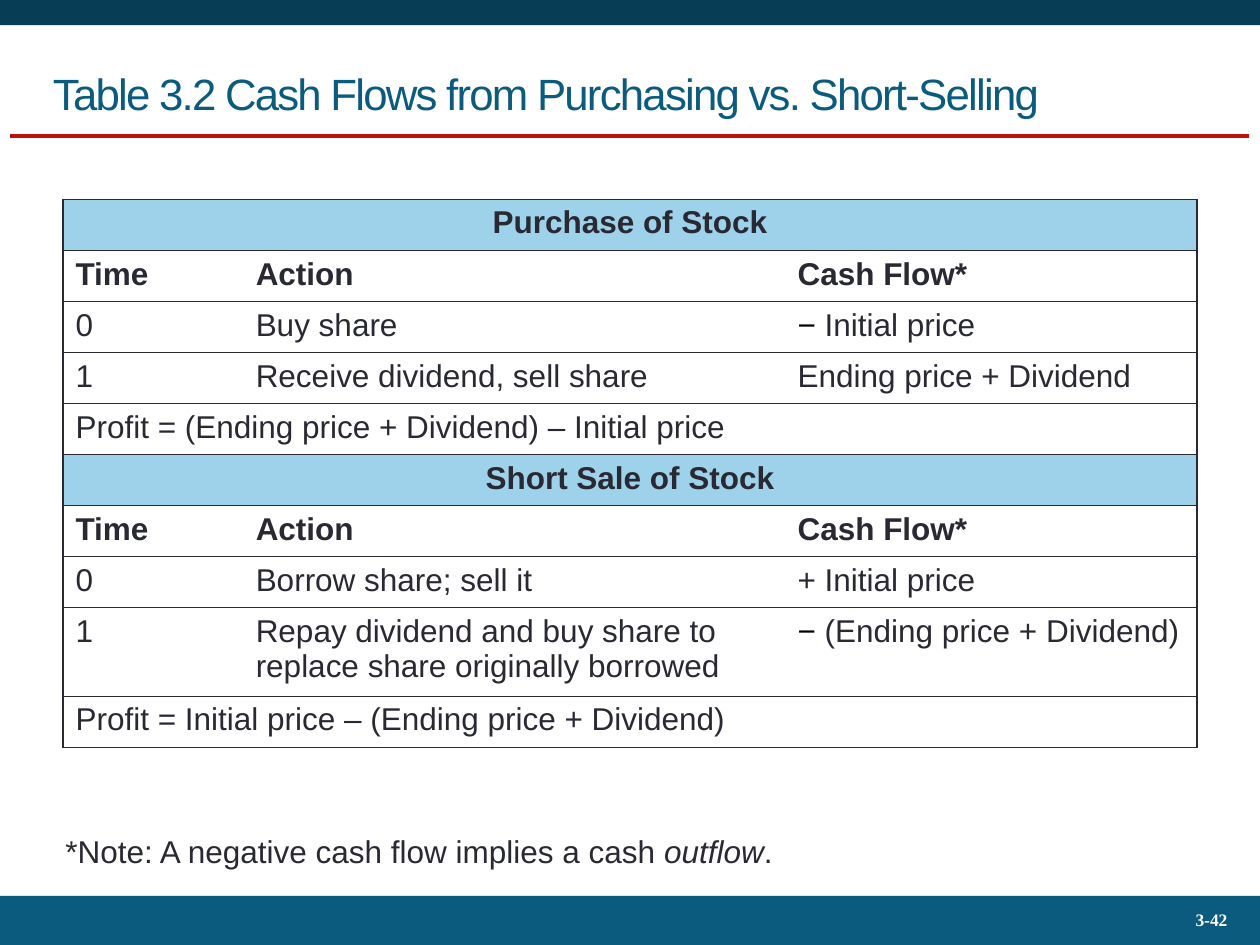
from dataclasses import dataclass

from lxml.etree import SubElement
from pptx import Presentation
from pptx.dml.color import RGBColor
from pptx.enum.shapes import MSO_CONNECTOR, MSO_SHAPE
from pptx.enum.text import MSO_ANCHOR, MSO_AUTO_SIZE, PP_ALIGN
from pptx.oxml.ns import qn
from pptx.util import Inches, Pt


@dataclass(frozen=True)
class Theme:
    dark_band: str = "073D55"
    blue: str = "0B5B7F"
    red: str = "BD130F"
    header_fill: str = "9ED1EA"
    ink: str = "292934"
    black: str = "000000"
    white: str = "FFFFFF"
    font: str = "Arial"
    number_font: str = "Times New Roman"
    title_size: int = 25
    body_size: int = 18
    number_size: int = 10
    border_width: float = 0.75
    rule_width: float = 2.25


THEME = Theme()
MINUS = "− "
NO_STYLE = "{2D5ABB26-0587-4C30-8999-92F81FD0307C}"
COLUMN_WIDTHS = (1.43, 4.3, 3.27)
TALL_ROW = 8
TALL_HEIGHT = 0.66
TABLE_HEIGHT = 4.31

HEADINGS = ("Time", "Action", "Cash Flow*")
ROWS = (
    ("Purchase of Stock",),
    HEADINGS,
    ("0", "Buy share", "− Initial price"),
    ("1", "Receive dividend, sell share", "Ending price + Dividend"),
    ("Profit = (Ending price + Dividend) – Initial price",),
    ("Short Sale of Stock",),
    HEADINGS,
    ("0", "Borrow share; sell it", "+ Initial price"),
    ("1", "Repay dividend and buy share to replace share originally borrowed",
     "− (Ending price + Dividend)"),
    ("Profit = Initial price – (Ending price + Dividend)",),
)


def color(value):
    return RGBColor.from_string(value)


def add_run(paragraph, text, ink=THEME.ink, **formats):
    run = paragraph.add_run()
    run.text = text
    values = {"name": THEME.font, "size": Pt(THEME.body_size),
              "bold": False, "italic": False} | formats
    for name, value in values.items():
        setattr(run.font, name, value)
    run.font.color.rgb = color(ink)
    return run


def add_band(slide, top, height, fill):
    band = slide.shapes.add_shape(
        MSO_SHAPE.RECTANGLE, 0, Inches(top), Inches(10), Inches(height))
    band.shadow.inherit = False
    band.fill.solid()
    band.fill.fore_color.rgb = color(fill)
    band.line.fill.background()


def add_rule(slide, left, right, top):
    rule = slide.shapes.add_connector(
        MSO_CONNECTOR.STRAIGHT, Inches(left), Inches(top), Inches(right), Inches(top))
    rule.line.color.rgb = color(THEME.red)
    rule.line.width = Pt(THEME.rule_width)
    SubElement(rule._element.spPr, qn("a:effectLst"))


def add_text_box(slide, left, top, width, height, **formats):
    """Return the first paragraph of a new wrapping text box."""
    box = slide.shapes.add_textbox(
        Inches(left), Inches(top), Inches(width), Inches(height))
    for name, value in ({"word_wrap": True} | formats).items():
        setattr(box.text_frame, name, value)
    paragraph = box.text_frame.paragraphs[0]
    paragraph.line_spacing = 0.93
    return paragraph


def set_title(slide, text):
    title = slide.shapes.title
    position = {"left": 0.32, "top": 0.17, "width": 9.36, "height": 0.83}
    for name, value in position.items():
        setattr(title, name, Inches(value))
    frame = title.text_frame
    frame.auto_size = MSO_AUTO_SIZE.NONE
    frame.vertical_anchor = MSO_ANCHOR.BOTTOM
    paragraph = frame.paragraphs[0]
    paragraph.alignment = PP_ALIGN.LEFT
    run = add_run(paragraph, text, THEME.blue, size=Pt(THEME.title_size))
    run.font._element.set("spc", "-100")


def set_borders(cell, visible):
    """Draw the named sides (L, R, T, B) and hide the others."""
    properties = cell._tc.get_or_add_tcPr()
    for side in "LRTB":
        line = SubElement(properties, qn(f"a:ln{side}"),
                          w=str(Pt(THEME.border_width)))
        if side in visible:
            fill = SubElement(line, qn("a:solidFill"))
            SubElement(fill, qn("a:srgbClr"), val=THEME.ink)
        else:
            SubElement(line, qn("a:noFill"))


def fill_cell(cell, text, bold, centered):
    paragraph = cell.text_frame.paragraphs[0]
    paragraph.alignment = PP_ALIGN.CENTER if centered else PP_ALIGN.LEFT
    if text.startswith(MINUS):
        add_run(paragraph, MINUS, THEME.black)
        text = text.removeprefix(MINUS)
    add_run(paragraph, text, bold=bold)


def add_cash_flow_table(slide):
    last = len(COLUMN_WIDTHS) - 1
    table = slide.shapes.add_table(
        len(ROWS), len(COLUMN_WIDTHS), Inches(0.5), Inches(1.58),
        Inches(sum(COLUMN_WIDTHS)), Inches(TABLE_HEIGHT)).table
    table.first_row = table.horz_banding = False
    table._tbl.tblPr.find(qn("a:tableStyleId")).text = NO_STYLE
    for column, width in zip(table.columns, COLUMN_WIDTHS):
        column.width = Inches(width)
    row_height = (TABLE_HEIGHT - TALL_HEIGHT) / (len(ROWS) - 1)

    for row, texts in enumerate(ROWS):
        is_tall = row == TALL_ROW
        table.rows[row].height = Inches(TALL_HEIGHT if is_tall else row_height)
        is_merged = len(texts) == 1
        is_section = is_merged and not texts[0].startswith("Profit")
        for column in range(last + 1):
            cell = table.cell(row, column)
            left = "L" if column == 0 else ""
            right = "R" if column == last or is_merged and column == 0 else ""
            set_borders(cell, "TB" + left + right)
            if is_section:
                cell.fill.solid()
                cell.fill.fore_color.rgb = color(THEME.header_fill)
            else:
                cell.fill.background()
        if is_merged:
            table.cell(row, 0).merge(table.cell(row, last))
        for column, text in enumerate(texts):
            fill_cell(table.cell(row, column), text,
                      is_section or texts is HEADINGS, is_section)


def add_note(slide):
    paragraph = add_text_box(slide, 0.42, 6.58, 7.92, 0.38)
    add_run(paragraph, "*Note: A negative cash flow implies a cash ")
    add_run(paragraph, "outflow", italic=True)
    add_run(paragraph, ".")


def add_page_number(slide, text):
    paragraph = add_text_box(slide, 8.67, 7.13, 1.17, 0.36,
                             vertical_anchor=MSO_ANCHOR.MIDDLE)
    paragraph.alignment = PP_ALIGN.RIGHT
    add_run(paragraph, text, THEME.white, name=THEME.number_font,
            size=Pt(THEME.number_size), bold=True)


def main():
    presentation = Presentation()
    presentation.slide_width = Inches(10)
    presentation.slide_height = Inches(7.5)
    slide = presentation.slides.add_slide(presentation.slide_layouts[5])
    add_band(slide, 0, 0.2, THEME.dark_band)
    add_rule(slide, 0.08, 9.91, 1.08)
    add_band(slide, 7.11, 0.39, THEME.blue)
    add_page_number(slide, "3-42")
    set_title(slide, "Table 3.2 Cash Flows from Purchasing vs. Short-Selling")
    add_cash_flow_table(slide)
    add_note(slide)
    presentation.save("out.pptx")


if __name__ == "__main__":
    main()
